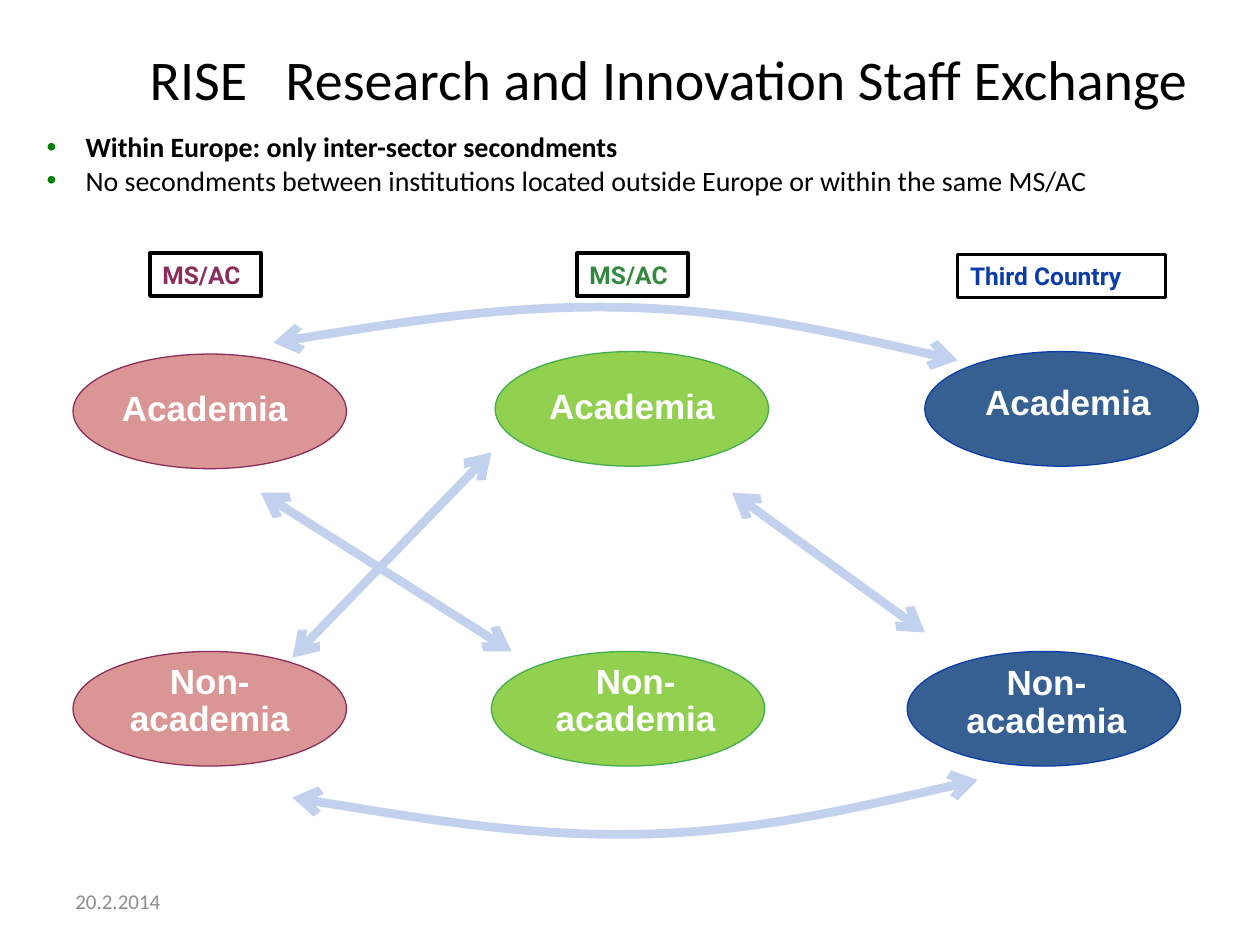
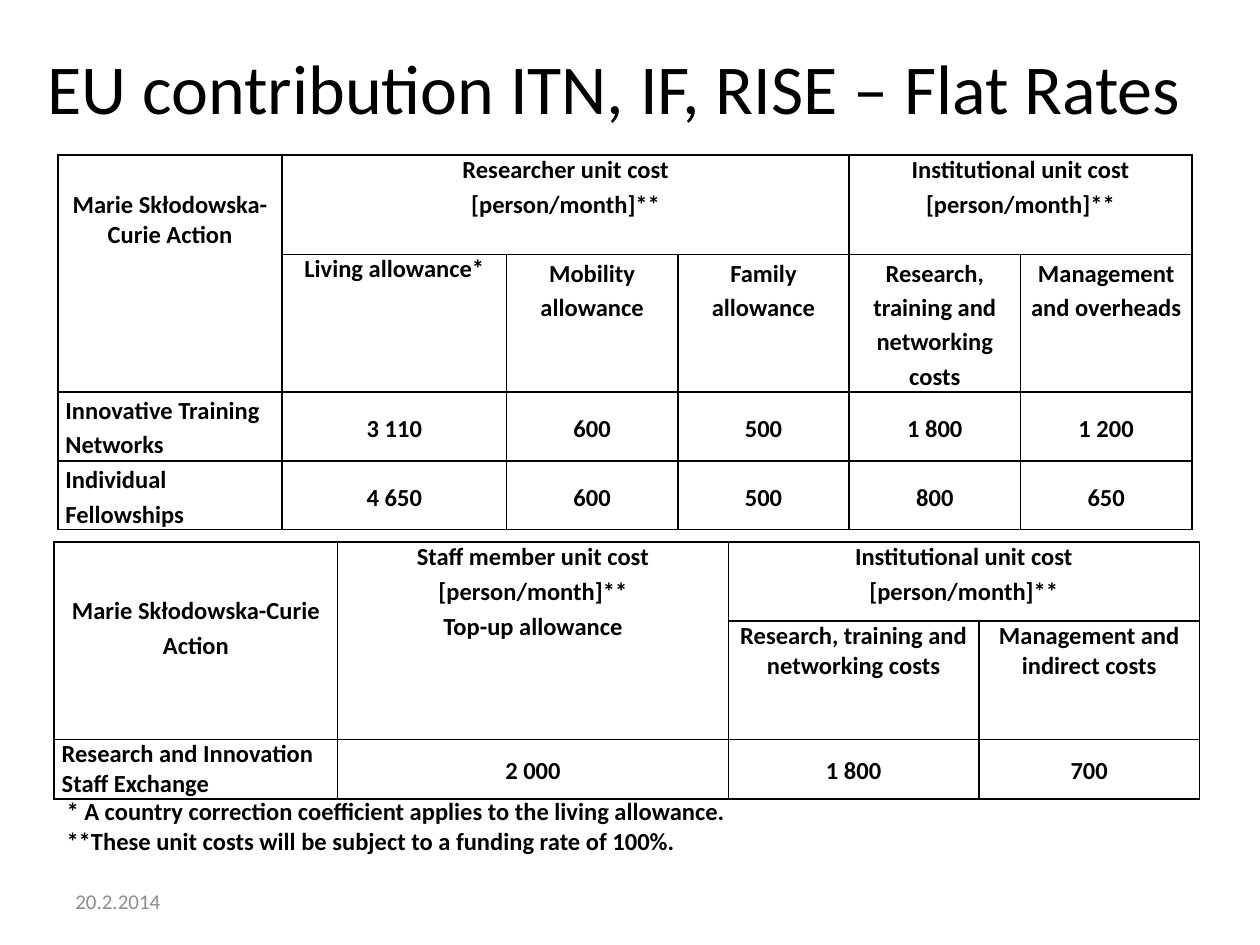
from dataclasses import dataclass

from pptx import Presentation
from pptx.dml.color import RGBColor as Rgb
from pptx.enum.shapes import MSO_CONNECTOR as Conn, MSO_SHAPE as Kind
from pptx.enum.text import MSO_ANCHOR as Anchor, MSO_AUTO_SIZE as Auto, PP_ALIGN as Align
from pptx.oxml.ns import qn
from pptx.oxml.xmlchemy import OxmlElement as Node
from pptx.util import Inches, Pt


@dataclass(frozen=True)
class Theme:
    # Colours
    ink: str = "000000"
    white: str = "FFFFFF"
    gray: str = "8C8C8C"
    bullet: str = "008000"
    arrow: str = "C2D1ED"
    # Fonts
    main: str = "Calibri"
    oval: str = "Arial"
    tag: str = "Roboto"
    # Type sizes
    big: int = 40
    title: int = 32
    node: int = 20
    body: int = 16
    small: int = 14
    date: int = 12


T = Theme()
TIGHT = (1.0, 3)    # line spacing, points after
LOOSE = (1.15, 10)


# ---- Shared helpers ----
def place(shape, box):
    shape.left, shape.top, shape.width, shape.height = map(Inches, box)


def add_run(par, text, size, color=T.ink, bold=False, font=T.main):
    run = par.add_run()
    run.text = text
    run.font.size = Pt(size)
    run.font.bold = bold
    run.font.name = font
    run.font.color.rgb = Rgb.from_string(color)
    return run


def add_node(parent, tag, **attrs):
    node = Node(tag)
    for key, value in attrs.items():
        node.set(key, str(value))
    parent.append(node)
    return node


def add_text(slide, box, lines, size, align=Align.LEFT, anchor=Anchor.TOP, space=1.0, **look):
    frame = slide.shapes.add_textbox(*map(Inches, box)).text_frame
    frame.word_wrap = True
    frame.vertical_anchor = anchor
    for i, line in enumerate(lines):
        par = frame.add_paragraph() if i else frame.paragraphs[0]
        par.alignment = align
        par.line_spacing = space
        add_run(par, line, size, **look)


def add_title(slide, box, align):
    place(slide.shapes.title, box)
    frame = slide.shapes.title.text_frame
    frame.auto_size = Auto.NONE
    frame.vertical_anchor = Anchor.MIDDLE
    par = frame.paragraphs[0]
    par.alignment = align
    return par


def add_date(slide):
    add_text(slide, (0.5, 6.95, 2.33, 0.4), ["20.2.2014"], T.date,
             anchor=Anchor.MIDDLE, color=T.gray)


# ---- Exchange diagram ----
def add_list(slide, box, items):
    body = slide.placeholders[1]
    place(body, box)
    frame = body.text_frame
    frame.auto_size = Auto.NONE
    for i, (text, bold) in enumerate(items):
        par = frame.add_paragraph() if i else frame.paragraphs[0]
        par.space_before = Pt(0)
        add_run(par, text, T.body, bold=bold)
        props = par._p.get_or_add_pPr()
        props.set("marL", str(Inches(0.31)))
        props.set("indent", str(-Inches(0.31)))
        add_node(add_node(props, "a:buClr"), "a:srgbClr", val=T.bullet)
        add_node(props, "a:buFont", typeface="Arial")
        add_node(props, "a:buChar", char="•")


def add_oval(slide, spot, fill, edge):
    oval = slide.shapes.add_shape(Kind.OVAL, *map(Inches, (*spot, 2.17, 0.91)))
    oval.shadow.inherit = False
    oval.fill.solid()
    oval.fill.fore_color.rgb = Rgb.from_string(fill)
    oval.line.color.rgb = Rgb.from_string(edge)
    oval.line.width = Pt(0.75)


def add_name(slide, spot, text, height):
    add_text(slide, (*spot, 2.05, height), [text], T.node, Align.CENTER,
             space=0.9, color=T.white, bold=True, font=T.oval)


def add_tag(slide, box, text, color):
    tag = slide.shapes.add_shape(Kind.RECTANGLE, *map(Inches, box))
    tag.shadow.inherit = False
    tag.fill.background()
    tag.line.color.rgb = Rgb.from_string(T.ink)
    tag.line.width = Pt(2)
    tag.text_frame.word_wrap = False
    par = tag.text_frame.paragraphs[0]
    par.alignment = Align.LEFT
    add_run(par, text, T.small, color, True, T.tag)


def style_arrow(shape):
    shape.line.color.rgb = Rgb.from_string(T.arrow)
    shape.line.width = Pt(5)
    line = shape.element.spPr.find(qn("a:ln"))
    add_node(line, "a:headEnd", type="arrow")
    add_node(line, "a:tailEnd", type="arrow")


def add_arrow(slide, start, end):
    arrow = slide.shapes.add_connector(Conn.STRAIGHT, *map(Inches, (*start, *end)))
    style_arrow(arrow)
    add_node(arrow.element.spPr, "a:effectLst")


def add_curve(slide, start, *points):
    """Draw a curve; every three points make one Bezier part."""
    pen = slide.shapes.build_freeform(*map(Inches, start))
    pen.add_line_segments([tuple(map(Inches, p)) for p in points], close=False)
    curve = pen.convert_to_shape()
    track = next(curve.element.iter(qn("a:path")))
    steps = track.findall(qn("a:lnTo"))
    for i in range(0, len(steps), 3):
        bend = add_node(track, "a:cubicBezTo")
        for step in steps[i:i + 3]:
            bend.append(step[0])
            track.remove(step)
    curve.shadow.inherit = False
    curve.fill.background()
    style_arrow(curve)


def draw_map(slide):
    # Per country: fill, edge, ovals and names (top, then bottom), tag
    lands = [
        ("D99694", "8A2E5C", (0.58, 2.81), (0.58, 5.17), (0.6, 3.06), (0.64, 5.22),
         (1.19, 2.01, 0.88, 0.34), "MS/AC", "8A2E5C"),
        ("92D050", "41AD4E", (3.93, 2.79), (3.9, 5.17), (3.99, 3.04), (4.02, 5.22),
         (4.58, 2.01, 0.88, 0.34), "MS/AC", "33893D"),
        ("376092", "0A3CAA", (7.34, 2.79), (7.2, 5.17), (7.45, 3.01), (7.28, 5.23),
         (7.6, 2.02, 1.65, 0.34), "Third Country", "0A3CAA"),
    ]
    for fill, edge, top, low, name, other, box, text, color in lands:
        add_oval(slide, top, fill, edge)
        add_oval(slide, low, fill, edge)
        add_name(slide, name, "Academia", 0.4)
        add_name(slide, other, "Non-academia", 0.71)
        add_tag(slide, box, text, color)
    # Arrows between sectors
    add_curve(slide, (2.17, 2.72), (3.1, 2.57), (4.03, 2.42), (4.94, 2.44),
              (5.84, 2.46), (6.72, 2.66), (7.6, 2.86))
    add_curve(slide, (2.32, 6.33), (3.25, 6.48), (4.19, 6.64), (5.09, 6.62),
              (6, 6.6), (6.88, 6.39), (7.76, 6.19))
    for start, end in [((2.07, 3.91), (4.06, 5.17)), ((5.81, 3.91), (7.34, 5.02)),
                       ((2.32, 5.22), (3.9, 3.59))]:
        add_arrow(slide, start, end)


def rise_slide(deck):
    slide = deck.slides.add_slide(deck.slide_layouts[1])
    par = add_title(slide, (0.27, 0.3, 9.26, 0.64), Align.RIGHT)
    add_run(par, "RISE", T.title)
    gap = add_run(par, " ", T.title)
    gap.font._element.set("spc", "1450")  # wide gap after the short name
    add_run(par, "Research and Innovation Staff Exchange", T.title)
    add_list(slide, (0.27, 0.98, 9.37, 0.7), [
        ("Within Europe: only inter-sector secondments", True),
        ("No secondments between institutions located outside Europe "
         "or within the same MS/AC", False)])
    draw_map(slide)
    add_date(slide)


# ---- Rate tables ----
def frame_cell(cell):
    cell.fill.background()
    cell.margin_left = cell.margin_right = Inches(0.06)
    cell.margin_top = cell.margin_bottom = 0
    props = cell._tc.get_or_add_tcPr()
    for i, side in enumerate("LRTB"):
        line = add_node(props, f"a:ln{side}", w=Pt(1))
        add_node(add_node(line, "a:solidFill"), "a:srgbClr", val=T.ink)
        props.insert(i, line)


def fill_cell(cell, text, style, align=Align.CENTER, anchor=Anchor.TOP):
    cell.vertical_anchor = anchor
    for i, line in enumerate(text.split("\n")):
        par = cell.text_frame.add_paragraph() if i else cell.text_frame.paragraphs[0]
        par.alignment = align
        par.line_spacing, after = style
        par.space_after = Pt(after)
        add_run(par, line, T.small, bold=True)


def add_grid(slide, spot, cols, rows, heads, data, lead, drop):
    """heads: row, column, rows and columns spanned, style, text."""
    box = (*spot, sum(cols), sum(rows))
    grid = slide.shapes.add_table(len(rows), len(cols), *map(Inches, box)).table
    grid.first_row = grid.horz_banding = False
    for col, width in zip(grid.columns, cols):
        col.width = Inches(width)
    for row, height in zip(grid.rows, rows):
        row.height = Inches(height)
    for cell in grid.iter_cells():
        frame_cell(cell)
    # Headings
    for row, col, down, across, style, text in heads:
        cell = grid.cell(row, col)
        if down * across > 1:
            cell.merge(grid.cell(row + down - 1, col + across - 1))
        fill_cell(cell, text, style)
    grid.cell(0, 0).margin_top = Inches(drop)
    # Rates
    for row, (name, *rates) in enumerate(data, 2):
        fill_cell(grid.cell(row, 0), name, lead, Align.LEFT)
        for col, rate in enumerate(rates, 1):
            fill_cell(grid.cell(row, col), rate, LOOSE, anchor=Anchor.MIDDLE)


def rates_slide(deck):
    slide = deck.slides.add_slide(deck.slide_layouts[5])
    par = add_title(slide, (0.17, 0.29, 9.41, 0.79), Align.CENTER)
    add_run(par, "EU contribution ITN, IF, RISE – Flat Rates", T.big)
    action = "Marie Skłodowska-Curie Action"
    unit = "unit cost\n[person/month]**"
    research = "Research, training and networking costs"
    # Networks and fellowships
    add_grid(slide, (0.46, 1.23), [1.78] * 2 + [1.36] * 4, [0.79, 1.09, 0.55, 0.54], [
        (0, 0, 2, 1, TIGHT, action),
        (0, 1, 1, 3, TIGHT, f"Researcher {unit}"),
        (0, 4, 1, 2, TIGHT, f"Institutional {unit}"),
        (1, 1, 1, 1, TIGHT, "Living allowance*"),
        (1, 2, 1, 1, LOOSE, "Mobility allowance"),
        (1, 3, 1, 1, LOOSE, "Family allowance"),
        (1, 4, 1, 1, LOOSE, research),
        (1, 5, 1, 1, LOOSE, "Management and overheads"),
    ], [
        ("Innovative Training Networks", "3 110", "600", "500", "1 800", "1 200"),
        ("Individual Fellowships", "4 650", "600", "500", "800", "650"),
    ], LOOSE, 0.28)
    # Notes
    add_text(slide, (0.43, 6.27, 9.06, 0.57), [
        "* A country correction coefficient applies to the living allowance.",
        "**These unit costs will be subject to a funding rate of 100%."], T.small, bold=True)
    # Staff exchange
    add_grid(slide, (0.43, 4.3), [2.25, 3.1, 1.99, 1.75], [0.63, 0.94, 0.47], [
        (0, 0, 2, 1, LOOSE, action),
        (0, 1, 2, 1, TIGHT, f"Staff member {unit}\nTop-up allowance"),
        (0, 2, 1, 2, TIGHT, f"Institutional {unit}"),
        (1, 2, 1, 1, TIGHT, research),
        (1, 3, 1, 1, TIGHT, "Management and indirect costs"),
    ], [("Research and Innovation Staff Exchange", "2 000", "1 800", "700")], TIGHT, 0.4)
    add_date(slide)


def main():
    deck = Presentation()
    deck.slide_width, deck.slide_height = Inches(10), Inches(7.5)
    rise_slide(deck)
    rates_slide(deck)
    deck.save("out.pptx")


if __name__ == "__main__":
    main()
